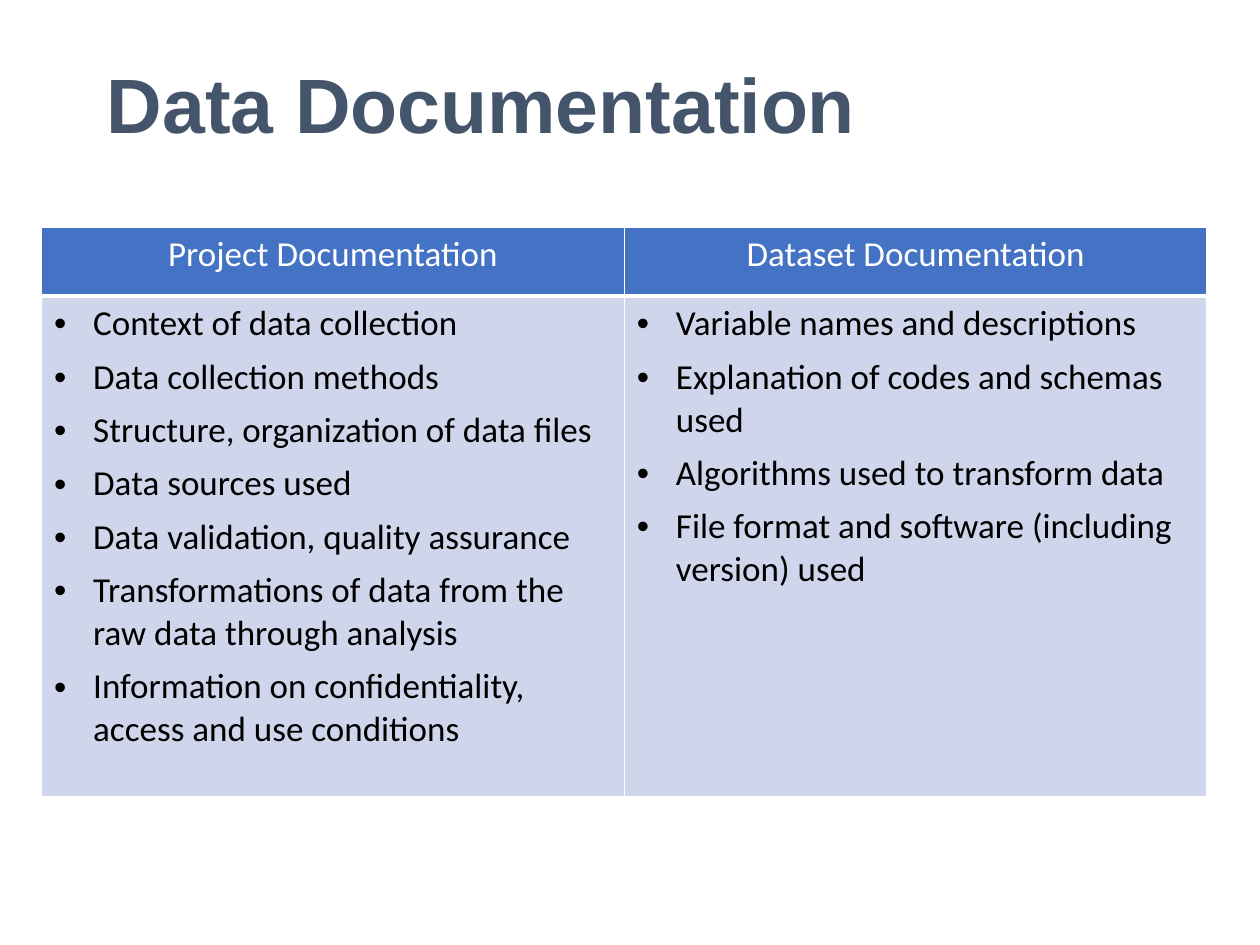
from dataclasses import dataclass

from lxml import etree
from pptx import Presentation
from pptx.dml.color import RGBColor
from pptx.enum.text import MSO_ANCHOR, PP_ALIGN
from pptx.oxml.ns import qn
from pptx.util import Inches, Pt

CENTER = PP_ALIGN.CENTER
MIDDLE = MSO_ANCHOR.MIDDLE

TITLE = "Data Documentation"
COLUMNS = [
    ("Project Documentation", [
        "Context of data collection",
        "Data collection methods",
        "Structure, organization of data files",
        "Data sources used",
        "Data validation, quality assurance",
        "Transformations of data from the raw data through analysis",
        "Information on confidentiality, access and use conditions",
    ]),
    ("Dataset Documentation", [
        "Variable names and descriptions",
        "Explanation of codes and schemas used",
        "Algorithms used to transform data",
        "File format and software (including version) used",
    ]),
]
TABLE_LEFT, TABLE_TOP, TABLE_WIDTH = 0.33, 1.8, 9.25
ROW_HEIGHTS = (0.55, 3.97)
BULLET_INDENT = 0.31


@dataclass(frozen=True)
class Theme:
    title_font: str = "Arial"
    body_font: str = "Calibri"
    title_size: int = 44
    body_size: int = 20
    title_color: str = "44546A"
    header_fill: str = "4472C4"
    header_text: str = "FFFFFF"
    body_fill: str = "CFD5EA"
    body_text: str = "000000"
    border: str = "FFFFFF"


THEME = Theme()


def set_font(paragraph, name, size, color, bold=False):
    font = paragraph.font
    font.name, font.size, font.bold = name, Pt(size), bold
    font.color.rgb = RGBColor.from_string(color)


def style_cell(cell, fill, bottom_width):
    """Draw the cell's borders, then its fill, in the order the schema needs."""
    properties = cell._tc.get_or_add_tcPr()
    for side, width in (("L", 1), ("R", 1), ("T", 1), ("B", bottom_width)):
        line = etree.SubElement(properties, qn(f"a:ln{side}"), w=str(Pt(width)))
        solid = etree.SubElement(line, qn("a:solidFill"))
        etree.SubElement(solid, qn("a:srgbClr"), val=THEME.border)
    cell.fill.solid()
    cell.fill.fore_color.rgb = RGBColor.from_string(fill)


def add_bullet(paragraph):
    paragraph.space_after = Pt(6)
    properties = paragraph._p.get_or_add_pPr()
    properties.set("marL", str(Inches(BULLET_INDENT)))
    properties.set("indent", str(-Inches(BULLET_INDENT)))
    etree.SubElement(properties, qn("a:buFont"), typeface="Arial")
    etree.SubElement(properties, qn("a:buChar"), char="•")


def add_title(slide):
    box = slide.shapes.add_textbox(Inches(0.75), Inches(0.4), Inches(8.48), Inches(0.92))
    frame = box.text_frame
    frame.word_wrap = True
    frame.vertical_anchor = MIDDLE
    paragraph = frame.paragraphs[0]
    paragraph.text = TITLE
    paragraph.line_spacing = 0.9
    set_font(paragraph, THEME.title_font, THEME.title_size, THEME.title_color, bold=True)


def add_documentation_table(slide):
    table = slide.shapes.add_table(
        len(ROW_HEIGHTS), len(COLUMNS), Inches(TABLE_LEFT), Inches(TABLE_TOP),
        Inches(TABLE_WIDTH), Inches(sum(ROW_HEIGHTS))).table
    for row, height in zip(table.rows, ROW_HEIGHTS):
        row.height = Inches(height)

    for index, (heading, items) in enumerate(COLUMNS):
        header, body = table.cell(0, index), table.cell(1, index)
        style_cell(header, THEME.header_fill, bottom_width=3)
        style_cell(body, THEME.body_fill, bottom_width=1)

        header.text = heading
        paragraph = header.text_frame.paragraphs[0]
        paragraph.alignment = CENTER
        set_font(paragraph, THEME.body_font, THEME.body_size, THEME.header_text)

        body.text = "\n".join(items)
        for paragraph in body.text_frame.paragraphs:
            add_bullet(paragraph)
            set_font(paragraph, THEME.body_font, THEME.body_size, THEME.body_text)


def main():
    presentation = Presentation()
    presentation.slide_width, presentation.slide_height = Inches(10), Inches(7.5)
    slide = presentation.slides.add_slide(presentation.slide_layouts[6])
    add_title(slide)
    add_documentation_table(slide)
    presentation.save("out.pptx")


if __name__ == "__main__":
    main()
